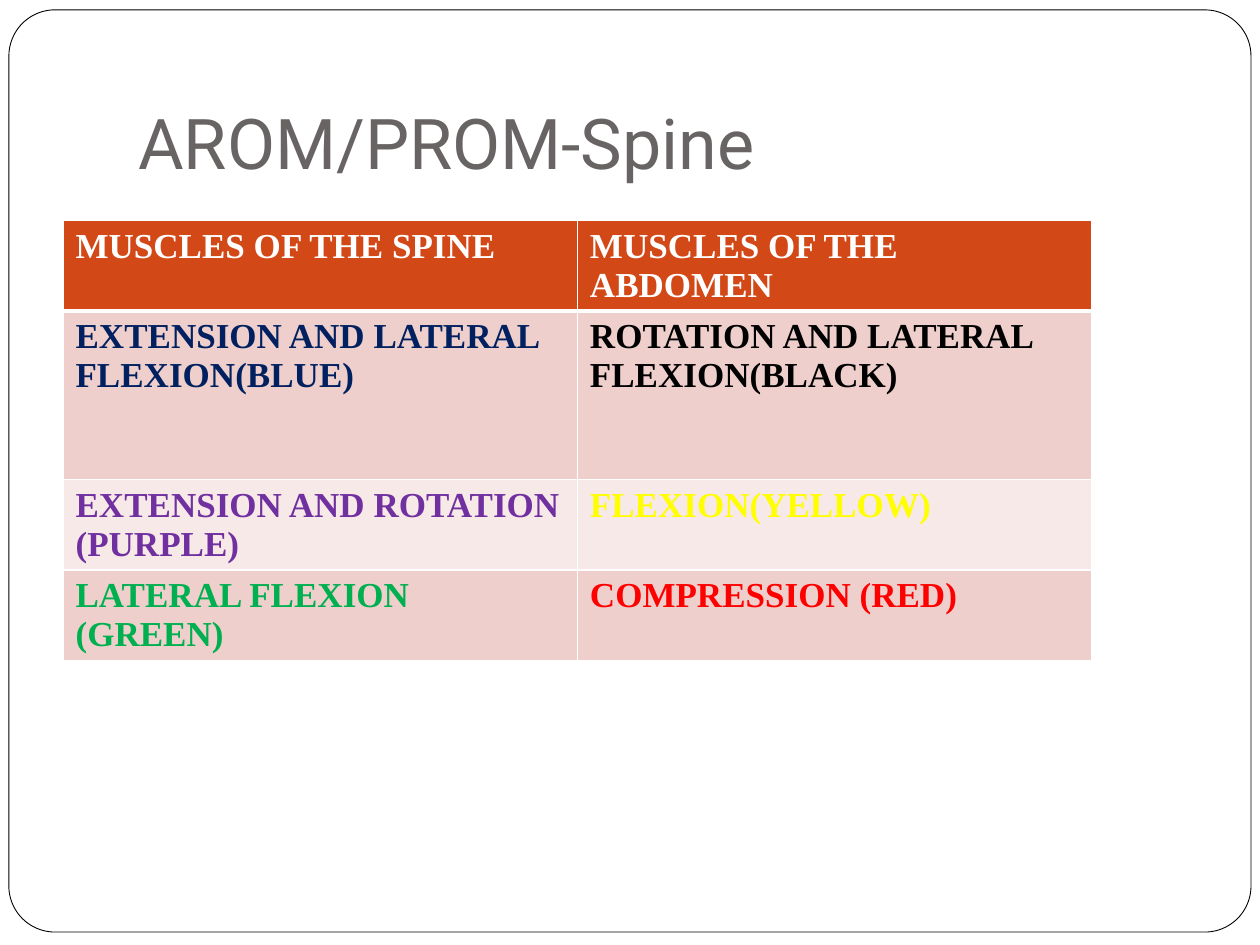
from lxml.etree import SubElement as Sub
from pptx import Presentation as Deck
from pptx.dml.color import RGBColor as RGB
from pptx.enum.shapes import MSO_SHAPE as Shape
from pptx.enum.text import MSO_ANCHOR as Anchor, MSO_AUTO_SIZE as Fit, PP_ALIGN as Align
from pptx.oxml.ns import qn
from pptx.util import Cm, Pt

WHITE = RGB(0xFF, 0xFF, 0xFF)
BLACK = RGB(0x00, 0x00, 0x00)
GREY = RGB(0x69, 0x64, 0x64)
RUST = RGB(0xD3, 0x48, 0x17)
ROSE = RGB(0xEF, 0xCF, 0xCC)
PALE = RGB(0xF7, 0xE9, 0xE8)
NAVY = RGB(0x00, 0x20, 0x60)
PURPLE = RGB(0x70, 0x30, 0xA0)
YELLOW = RGB(0xFF, 0xFF, 0x00)
GREEN = RGB(0x00, 0xB0, 0x50)
RED = RGB(0xFF, 0x00, 0x00)

ROWS = [
    (1.8, RUST, [("MUSCLES OF THE SPINE", WHITE),
                 ("MUSCLES OF THE ABDOMEN", WHITE)]),
    (3.4, ROSE, [("EXTENSION AND LATERAL FLEXION(BLUE)", NAVY),
                 ("ROTATION AND LATERAL FLEXION(BLACK)", BLACK)]),
    (1.8, PALE, [("EXTENSION AND ROTATION (PURPLE)", PURPLE),
                 ("FLEXION(YELLOW)", YELLOW)]),
    (1.8, ROSE, [("LATERAL FLEXION (GREEN)", GREEN),
                 ("COMPRESSION (RED)", RED)]),
]


class Page:
    head = "Roboto"
    body = "Times New Roman"

    def __init__(self, deck):
        self.slide = deck.slides.add_slide(deck.slide_layouts[5])

    def font(self, para, name, size, color, bold=False):
        font = para.font
        font.name, font.size, font.bold = name, Pt(size), bold
        font.color.rgb = color

    def title(self, text, left, top, width, height):
        title = self.slide.shapes.title
        title.left, title.top = Cm(left), Cm(top)
        title.width, title.height = Cm(width), Cm(height)
        frame = title.text_frame
        frame.text = text
        frame.auto_size = Fit.NONE
        frame.vertical_anchor = Anchor.BOTTOM
        frame.margin_left = frame.margin_right = frame.margin_bottom = Cm(0.25)
        frame.margin_top = Cm(0.13)
        para = frame.paragraphs[0]
        para.alignment = Align.LEFT
        self.font(para, self.head, 40, GREY)

    def frame(self, left, top, width, height):
        shapes = self.slide.shapes
        box = shapes.add_shape(Shape.ROUNDED_RECTANGLE, Cm(left), Cm(top),
                               Cm(width), Cm(height))
        box.adjustments[0] = 0.05
        box.shadow.inherit = False
        box.fill.solid()
        box.fill.fore_color.rgb = WHITE
        box.line.color.rgb = BLACK
        box.line.width = Pt(0.5)
        shapes.title.element.addprevious(box.element)

    def edge(self, cell, side, width):
        props = cell._tc.get_or_add_tcPr()
        line = Sub(props, qn(f"a:ln{side}"), w=str(Pt(width)))
        fill = Sub(line, qn("a:solidFill"))
        Sub(fill, qn("a:srgbClr"), val=str(WHITE))

    def table(self, rows, left, top, width):
        high = sum(row[0] for row in rows)
        cols = len(rows[0][2])
        table = self.slide.shapes.add_table(
            len(rows), cols, Cm(left), Cm(top), Cm(width), Cm(high)).table
        for i, (tall, fill, cells) in enumerate(rows):
            table.rows[i].height = Cm(tall)
            for j, (text, color) in enumerate(cells):
                cell = table.cell(i, j)
                for side in "LRTB":
                    self.edge(cell, side, 3 if i == 0 and side == "B" else 1)
                cell.fill.solid()
                cell.fill.fore_color.rgb = fill
                cell.text = text
                para = cell.text_frame.paragraphs[0]
                self.font(para, self.body, 20, color, True)


def main():
    deck = Deck()
    deck.slide_width, deck.slide_height = Cm(25.4), Cm(19.05)
    page = Page(deck)
    page.frame(0.18, 0.2, 25.04, 18.59)
    page.title("AROM/PROM-Spine", 2.54, 0.76, 21.59, 3.18)
    page.table(ROWS, 1.27, 4.45, 20.74)
    deck.save("out.pptx")


if __name__ == "__main__":
    main()
